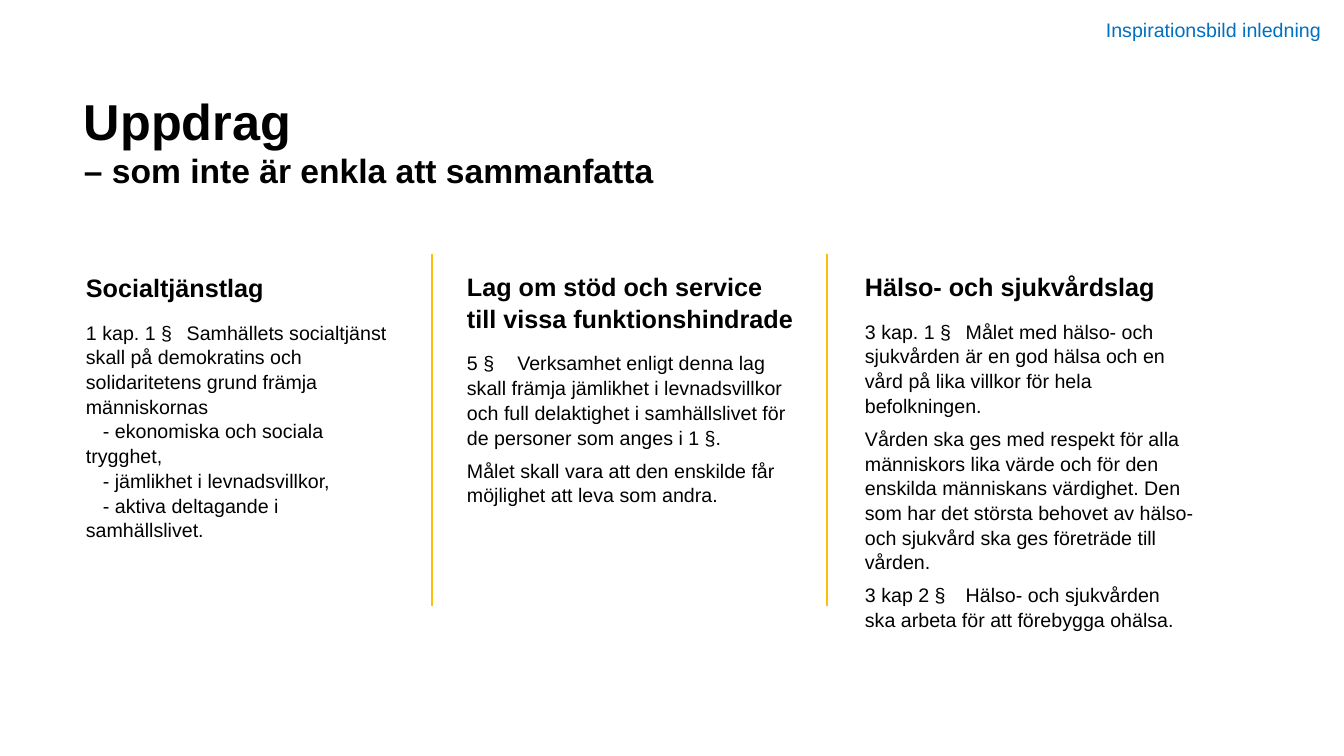
from lxml.etree import SubElement
from pptx import Presentation
from pptx.dml.color import RGBColor as RGB
from pptx.enum.shapes import MSO_CONNECTOR as CONN
from pptx.oxml.ns import qn
from pptx.util import Emu, Pt

SCALE = 914400 / 100.8
COLORS = {"text": "000000", "divider": "FFBE0A", "note": "0070C0"}


def px(n):
    return Emu(round(n * SCALE))


def add_text(tf, text, size=14, bold=False, color="text", margin=0, indent=0,
             tab=None, after=0, spacing=1.0):
    p = tf.paragraphs[0]
    if p.runs:
        p = tf.add_paragraph()
    pPr = p._p.get_or_add_pPr()
    pPr.set("marL", str(px(margin)))
    pPr.set("indent", str(px(indent)))
    if tab:
        tabs = SubElement(pPr, qn("a:tabLst"))
        SubElement(tabs, qn("a:tab"), pos=str(px(tab)), algn="l")
    p.line_spacing = spacing
    p.space_after = Pt(after)
    r = p.add_run()
    r.text = text
    r.font.name = "Arial"
    r.font.size = Pt(size)
    r.font.bold = bold
    r.font.color.rgb = RGB.from_string(COLORS[color])


def add_box(x, y, w, h):
    tf = s.shapes.add_textbox(px(x), px(y), px(w), px(h)).text_frame
    tf.word_wrap = True
    return tf


prs = Presentation()
prs.slide_width, prs.slide_height = px(1344), px(756)
s = prs.slides.add_slide(prs.slide_layouts[6])

DASH = {"indent": 17, "after": 0}
columns = [
    (73, 266, 331, "Socialtjänstlag", [
        ("1 kap. 1 §\tSamhällets socialtjänst skall på demokratins och "
         "solidaritetens grund främja människornas", {"tab": 105, "after": 0}),
        ("- ekonomiska och sociala trygghet,", DASH),
        ("- jämlikhet i levnadsvillkor,", DASH),
        ("- aktiva deltagande i samhällslivet.", DASH),
    ]),
    (454, 265, 353, "Lag om stöd och service till vissa funktionshindrade", [
        ("5 §\tVerksamhet enligt denna lag skall främja jämlikhet i "
         "levnadsvillkor och full delaktighet i samhällslivet för de personer "
         "som anges i 1 §.", {"tab": 47}),
        ("Målet skall vara att den enskilde får möjlighet att leva som andra.", {}),
    ]),
    (852, 265, 353, "Hälso- och sjukvårdslag", [
        ("3 kap. 1 §\tMålet med hälso- och sjukvården är en god hälsa och en "
         "vård på lika villkor för hela befolkningen.", {"tab": 105}),
        ("Vården ska ges med respekt för alla människors lika värde och för den "
         "enskilda människans värdighet. Den som har det största behovet av "
         "hälso- och sjukvård ska ges företräde till vården.", {}),
        ("3 kap 2 §\tHälso- och sjukvården ska arbeta för att förebygga ohälsa.",
         {"tab": 100}),
    ]),
]
for x, y, w, heading, paragraphs in columns:
    tf = add_box(x, y, w, 412)
    add_text(tf, heading, size=18, bold=True, margin=3, after=12, spacing=1.05)
    for text, fmt in paragraphs:
        add_text(tf, text, **{"margin": 3, "after": 6, "spacing": 1.05, **fmt})

tf = add_box(74, 90, 1132, 56)
add_text(tf, "Uppdrag", size=36, bold=True, spacing=0.95)
add_text(tf, "– som inte är enkla att sammanfatta", size=24, bold=True, spacing=0.95)

for x in (432, 827):
    line = s.shapes.add_connector(CONN.STRAIGHT, px(x), px(254), px(x), px(606))
    line.line.color.rgb = RGB.from_string(COLORS["divider"])
    line.line.width = Pt(1.5)
    SubElement(line._element.spPr, qn("a:effectLst"))

add_text(add_box(1096, 13, 240, 34), "Inspirationsbild inledning", color="note")

prs.save("out.pptx")
